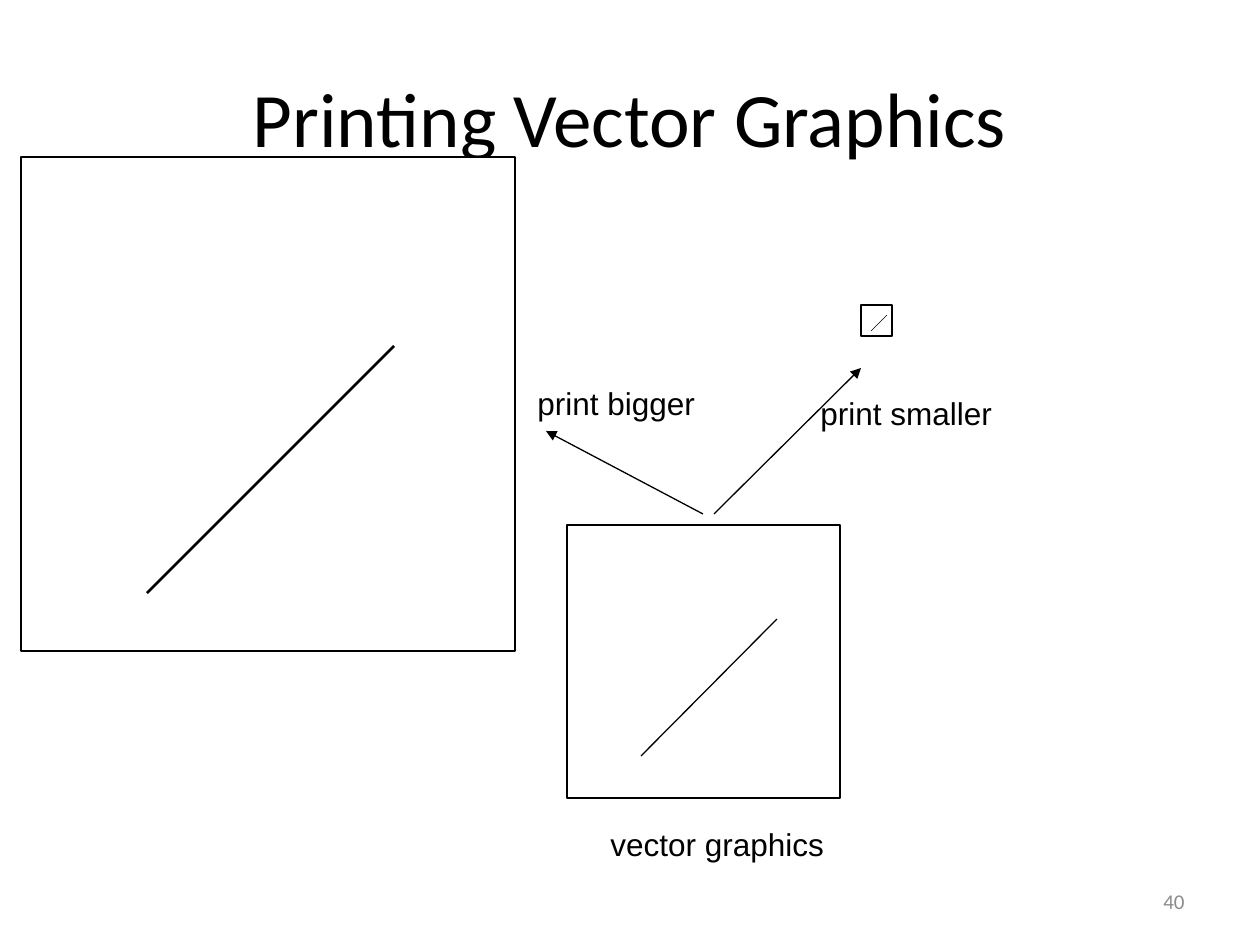
from dataclasses import dataclass

from lxml import etree
from pptx import Presentation
from pptx.dml.color import RGBColor
from pptx.enum.shapes import MSO_CONNECTOR, MSO_SHAPE
from pptx.enum.text import MSO_ANCHOR, PP_ALIGN
from pptx.oxml.ns import qn
from pptx.util import Pt

RECT = MSO_SHAPE.RECTANGLE
LINE = MSO_CONNECTOR.STRAIGHT
LEFT, CENTER, RIGHT = PP_ALIGN.LEFT, PP_ALIGN.CENTER, PP_ALIGN.RIGHT
TOP, MIDDLE = MSO_ANCHOR.TOP, MSO_ANCHOR.MIDDLE
SCALE = 914400 / 126


@dataclass(frozen=True)
class Theme:
    ink: RGBColor = RGBColor(0, 0, 0)
    paper: RGBColor = RGBColor(255, 255, 255)
    gray: RGBColor = RGBColor(0x8C, 0x8C, 0x8C)
    head: str = "Calibri"
    body: str = "Arial"
    big: int = 44
    mid: int = 18
    small: int = 12
    thin: float = 0.75


THEME = Theme()


def px(*vals):
    return [round(val * SCALE) for val in vals]


def write(frame, text, font=THEME.body, size=THEME.mid, color=THEME.ink,
          align=LEFT, anchor=TOP, wrap=True):
    frame.word_wrap = wrap
    frame.vertical_anchor = anchor
    para = frame.paragraphs[0]
    para.alignment = align
    run = para.add_run()
    run.text = text
    run.font.name = font
    run.font.size = Pt(size)
    run.font.color.rgb = color


class Board:
    def __init__(self, slide, theme):
        self.slide = slide
        self.theme = theme

    def title(self, text, *box):
        shape = self.slide.shapes.title
        shape.left, shape.top, shape.width, shape.height = px(*box)
        write(shape.text_frame, text, font=self.theme.head,
              size=self.theme.big, align=CENTER, anchor=MIDDLE)

    def label(self, text, *box, **style):
        shape = self.slide.shapes.add_textbox(*px(*box))
        write(shape.text_frame, text, **style)

    def square(self, left, top, side):
        shape = self.slide.shapes.add_shape(RECT, *px(left, top, side, side))
        shape.shadow.inherit = False
        shape.fill.solid()
        shape.fill.fore_color.rgb = self.theme.paper
        shape.line.color.rgb = self.theme.ink
        shape.line.width = Pt(self.theme.thin)

    def line(self, *ends, width=THEME.thin, arrow=False):
        link = self.slide.shapes.add_connector(LINE, *px(*ends))
        link.line.color.rgb = self.theme.ink
        link.line.width = Pt(width)
        props = link._element.spPr
        if arrow:
            etree.SubElement(props.find(qn("a:ln")), qn("a:tailEnd"),
                             type="triangle")
        etree.SubElement(props, qn("a:effectLst"))


def main():
    deck = Presentation()
    deck.slide_width, deck.slide_height = px(1260, 945)
    board = Board(deck.slides.add_slide(deck.slide_layouts[5]), THEME)

    board.title("Printing Vector Graphics", 63, 38, 1134, 157)
    board.label("40", 903, 876, 294, 50, font=THEME.head, size=THEME.small,
                color=THEME.gray, align=RIGHT, anchor=MIDDLE)

    board.line(714, 514, 861, 368, arrow=True)
    board.line(703, 514, 546, 431, arrow=True)

    for text, left, top, width in (
        ("vector graphics", 598, 819, 239),
        ("print bigger", 525, 378, 183),
        ("print smaller", 808, 388, 197),
    ):
        board.label(text, left, top, width, 50, wrap=False)

    for square, stroke, width in (
        ((567, 525, 273), (641, 756, 777, 619), THEME.thin),
        ((21, 157, 494), (147, 593, 394, 346), 2 * THEME.thin),
        ((861, 305, 31), (871, 331, 887, 315), THEME.thin / 3),
    ):
        board.square(*square)
        board.line(*stroke, width=width)

    deck.save("out.pptx")


if __name__ == "__main__":
    main()
